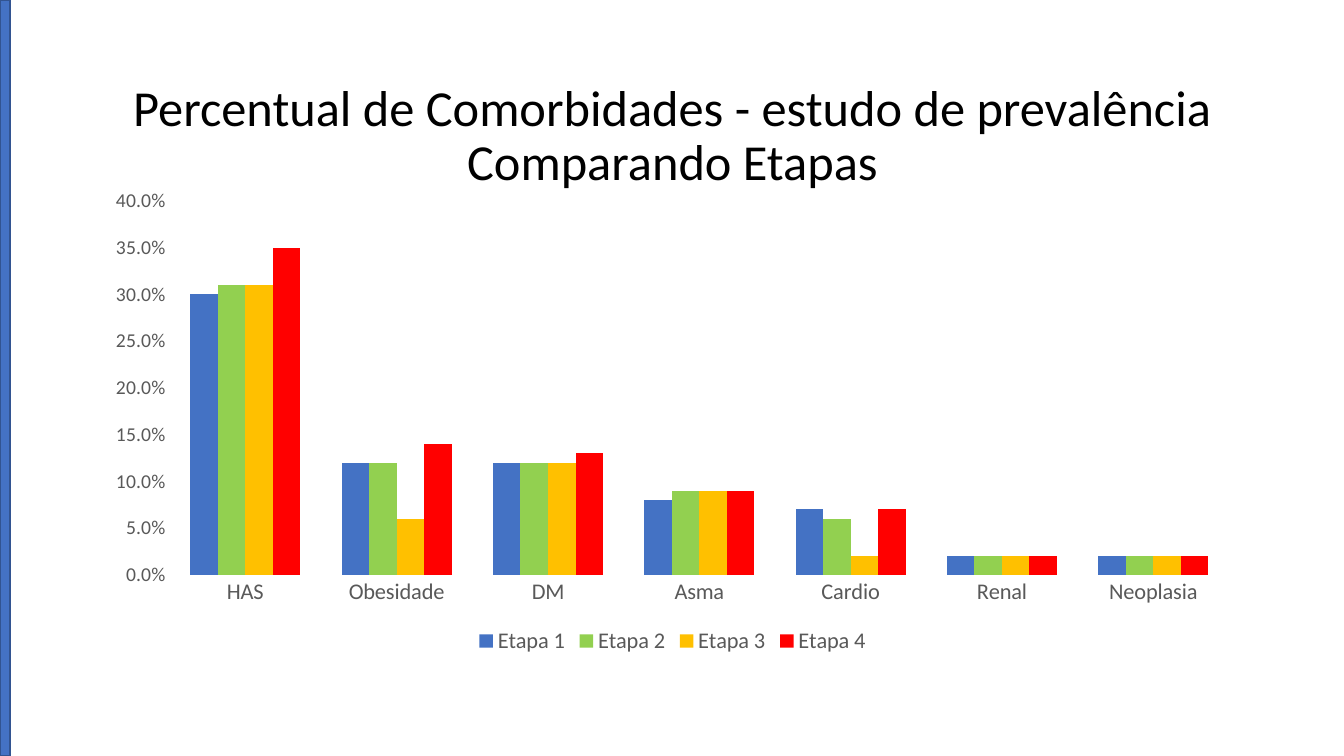
from dataclasses import dataclass

from pptx import Presentation
from pptx.chart.data import CategoryChartData
from pptx.dml.color import RGBColor
from pptx.enum.chart import XL_CHART_TYPE as ChartType
from pptx.enum.chart import XL_LEGEND_POSITION as LegendPosition
from pptx.enum.chart import XL_TICK_MARK as TickMark
from pptx.enum.shapes import MSO_SHAPE as Shape
from pptx.enum.text import MSO_ANCHOR as Anchor
from pptx.enum.text import MSO_AUTO_SIZE as AutoSize
from pptx.enum.text import PP_ALIGN as Align
from pptx.util import Inches, Pt


@dataclass(frozen=True)
class Theme:
    font: str = "Calibri"
    black: str = "000000"
    gray: str = "595959"
    blue: str = "4472C4"
    dark_blue: str = "325491"
    green: str = "92D050"
    amber: str = "FFC000"
    red: str = "FF0000"
    title_size: int = 36
    label_size: int = 16
    value_size: int = 14
    chart_size: int = 10


THEME = Theme()
COMORBIDITIES = ["HAS", "Obesidade", "DM", "Asma", "Cardio", "Renal", "Neoplasia"]
STAGES = [
    ("Etapa 1", THEME.blue, [0.3, 0.12, 0.12, 0.08, 0.07, 0.02, 0.02]),
    ("Etapa 2", THEME.green, [0.31, 0.12, 0.12, 0.09, 0.06, 0.02, 0.02]),
    ("Etapa 3", THEME.amber, [0.31, 0.06, 0.12, 0.09, 0.02, 0.02, 0.02]),
    ("Etapa 4", THEME.red, [0.35, 0.14, 0.13, 0.09, 0.07, 0.02, 0.02]),
]


def set_font(font, size, color):
    font.name = THEME.font
    font.size = Pt(size)
    font.bold = False
    font.color.rgb = RGBColor.from_string(color)


deck = Presentation()
deck.slide_width, deck.slide_height = Inches(13.33), Inches(7.5)
page = deck.slides.add_slide(deck.slide_layouts[5])

# Title, raised by a deeper bottom margin
title = page.shapes.title
title.left, title.top = Inches(0.92), Inches(0.96)
title.width, title.height = Inches(11.5), Inches(1.45)
frame = title.text_frame
frame.word_wrap = True
frame.auto_size = AutoSize.NONE
frame.vertical_anchor = Anchor.MIDDLE
frame.margin_bottom = Inches(0.7)
frame.text = "Percentual de Comorbidades - estudo de prevalência\vComparando Etapas"
para = frame.paragraphs[0]
para.alignment = Align.CENTER
para.line_spacing = 0.9
set_font(para.font, THEME.title_size, THEME.black)

# Comorbidity chart
data = CategoryChartData(number_format="###0.0%")
data.categories = COMORBIDITIES
for name, _, values in STAGES:
    data.add_series(name, values)
chart = page.shapes.add_chart(
    ChartType.COLUMN_CLUSTERED,
    Inches(0.92), Inches(1.78), Inches(11.5), Inches(4.76), data,
).chart
set_font(chart.font, THEME.chart_size, THEME.black)
chart.has_title = False

plot = chart.plots[0]
plot.gap_width = 150
plot.overlap = 0
plot.vary_by_categories = False
for series, (_, color, _) in zip(plot.series, STAGES):
    series.format.fill.solid()
    series.format.fill.fore_color.rgb = RGBColor.from_string(color)

for axis, size in (
    (chart.category_axis, THEME.label_size),
    (chart.value_axis, THEME.value_size),
):
    axis.has_major_gridlines = False
    axis.major_tick_mark = axis.minor_tick_mark = TickMark.NONE
    axis.format.line.fill.background()
    set_font(axis.tick_labels.font, size, THEME.gray)

percent_axis = chart.value_axis
percent_axis.minimum_scale, percent_axis.maximum_scale = 0, 0.4
percent_axis.major_unit = 0.05
percent_axis.tick_labels.number_format = "###0.0%"
percent_axis.tick_labels.number_format_is_linked = False

chart.has_legend = True
chart.legend.position = LegendPosition.BOTTOM
chart.legend.include_in_layout = False
set_font(chart.legend.font, THEME.label_size, THEME.gray)

# Left edge bar
edge_bar = page.shapes.add_shape(
    Shape.RECTANGLE, 0, 0, Inches(0.1), deck.slide_height
)
edge_bar.shadow.inherit = False
edge_bar.fill.solid()
edge_bar.fill.fore_color.rgb = RGBColor.from_string(THEME.blue)
edge_bar.line.color.rgb = RGBColor.from_string(THEME.dark_blue)
edge_bar.line.width = Pt(1)

deck.save("out.pptx")
